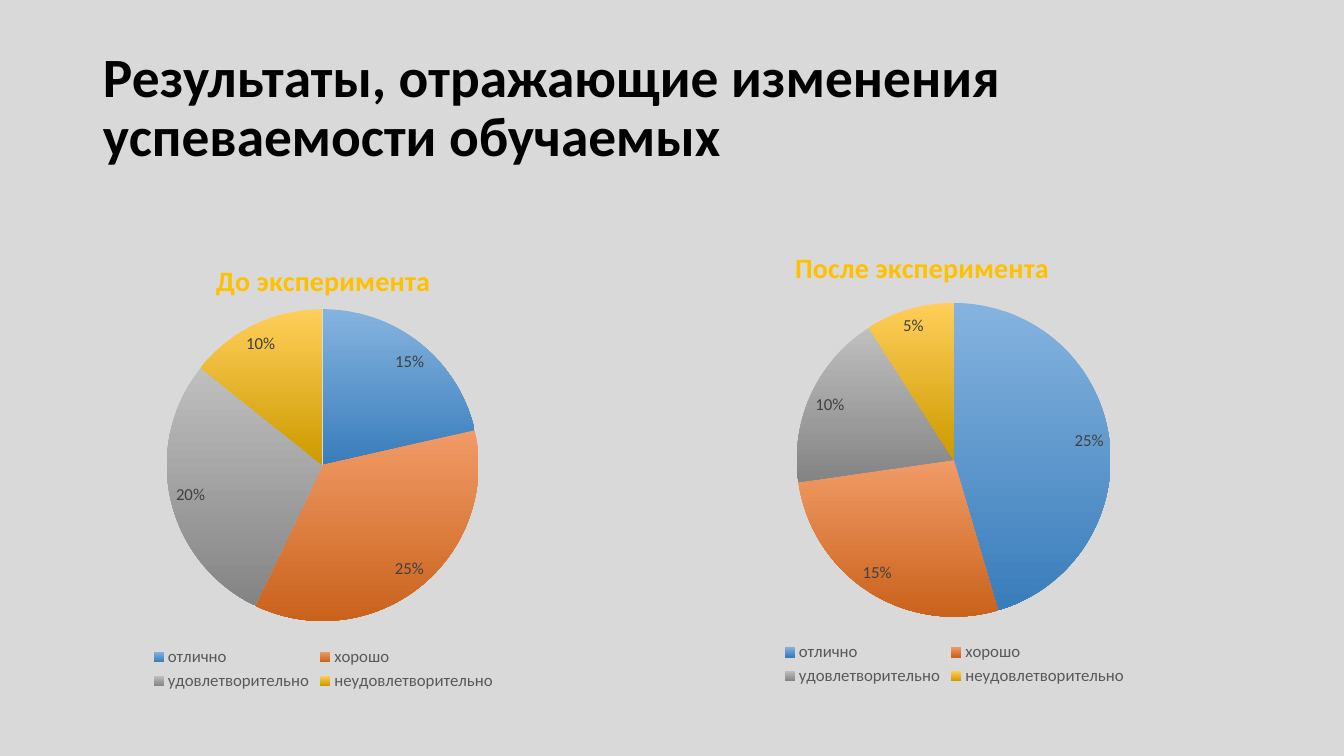
from lxml import etree
from pptx import Presentation
from pptx.chart.data import CategoryChartData
from pptx.dml.color import RGBColor
from pptx.enum.chart import XL_CHART_TYPE as ChartType
from pptx.enum.chart import XL_LABEL_POSITION as LabelPosition
from pptx.enum.chart import XL_LEGEND_POSITION as LegendPosition
from pptx.enum.text import MSO_ANCHOR as Anchor
from pptx.oxml.ns import qn
from pptx.util import Pt

PX = 914400 / 100.8
FONT = "Calibri"
GRADES = ["отлично", "хорошо", "удовлетворительно", "неудовлетворительно"]
GRADIENTS = [("85B3DF", "397DBB"), ("F19B67", "CA621C"),
             ("BFBFBF", "848484"), ("FFCE59", "CD9A00")]


def px(*lengths):
    return [round(length * PX) for length in lengths]


def paint(color, value):
    color.rgb = RGBColor.from_string(value)


def style(font, size, color, bold=False):
    font.name, font.size, font.bold = FONT, Pt(size), bold
    paint(font.color, color)


def write(para, text, size, color, bold=False, spacing=None):
    span = para.add_run()
    span.text = text
    style(span.font, size, color, bold)
    para.line_spacing = spacing


def add_heading(page, area, text):
    box = page.shapes.add_textbox(*px(*area))
    box.text_frame.word_wrap = True
    box.text_frame.vertical_anchor = Anchor.MIDDLE
    write(box.text_frame.paragraphs[0], text,
          size=39.6, color="000000", bold=True, spacing=0.9)


def place(parent, index, **settings):
    """Give a chart part a manual layout."""
    for old in parent.findall(qn("c:layout")):
        parent.remove(old)
    layout = etree.Element(qn("c:layout"))
    manual = etree.SubElement(layout, qn("c:manualLayout"))
    for name, value in settings.items():
        etree.SubElement(manual, qn(f"c:{name}")).set("val", str(value))
    parent.insert(index, layout)


def add_pie(page, area, title, title_at, circle, values):
    left, top, width, height = area
    data = CategoryChartData(number_format="0%")
    data.categories = GRADES
    data.add_series("Series 1", values)
    chart = page.shapes.add_chart(ChartType.PIE, *px(*area), data).chart
    style(chart.font, 10, "000000")

    # Title
    chart.has_title = True
    write(chart.chart_title.text_frame.paragraphs[0], title,
          size=20, color="FFC000", bold=True)
    x, y = title_at
    place(chart.chart_title._element, 1, xMode="edge", yMode="edge",
          x=round((x - left) / width, 3), y=round((y - top) / height, 3))

    # Circle
    x, y, diameter = circle
    place(chart._chartSpace.chart.plotArea, 0,
          layoutTarget="inner", xMode="edge", yMode="edge",
          x=round((x - left) / width, 3), y=round((y - top) / height, 3),
          w=round(diameter / width, 3), h=round(diameter / height, 3))

    # Slices
    plot = chart.plots[0]
    plot.vary_by_categories = True
    for index, colors in enumerate(GRADIENTS):
        fill = plot.series[0].points[index].format.fill
        fill.gradient()
        fill.gradient_angle = 270
        for position, (stop, color) in enumerate(zip(fill.gradient_stops, colors)):
            stop.position = position
            paint(stop.color, color)

    # Labels and legend
    plot.has_data_labels = True
    labels = plot.data_labels
    labels.show_value = True
    labels.number_format, labels.number_format_is_linked = "0%", False
    labels.position = LabelPosition.BEST_FIT
    style(labels.font, 12, "404040")
    chart.has_legend = True
    chart.legend.position = LegendPosition.BOTTOM
    chart.legend.include_in_layout = False
    style(chart.legend.font, 12, "595959")


def main():
    deck = Presentation()
    deck.slide_width, deck.slide_height = px(1344, 756)
    page = deck.slides.add_slide(deck.slide_layouts[6])
    page.background.fill.solid()
    paint(page.background.fill.fore_color, "D9D9D9")

    add_heading(page, (93, 40, 1159, 138),
                "Результаты, отражающие изменения успеваемости обучаемых")
    add_pie(page, (81, 234, 485, 461), "До эксперимента", (211, 256),
            (167, 309, 312), [0.15, 0.25, 0.2, 0.1])
    add_pie(page, (712, 227, 485, 463), "После эксперимента", (790, 243),
            (797, 303, 314), [0.25, 0.15, 0.1, 0.05])

    deck.save("out.pptx")


if __name__ == "__main__":
    main()
